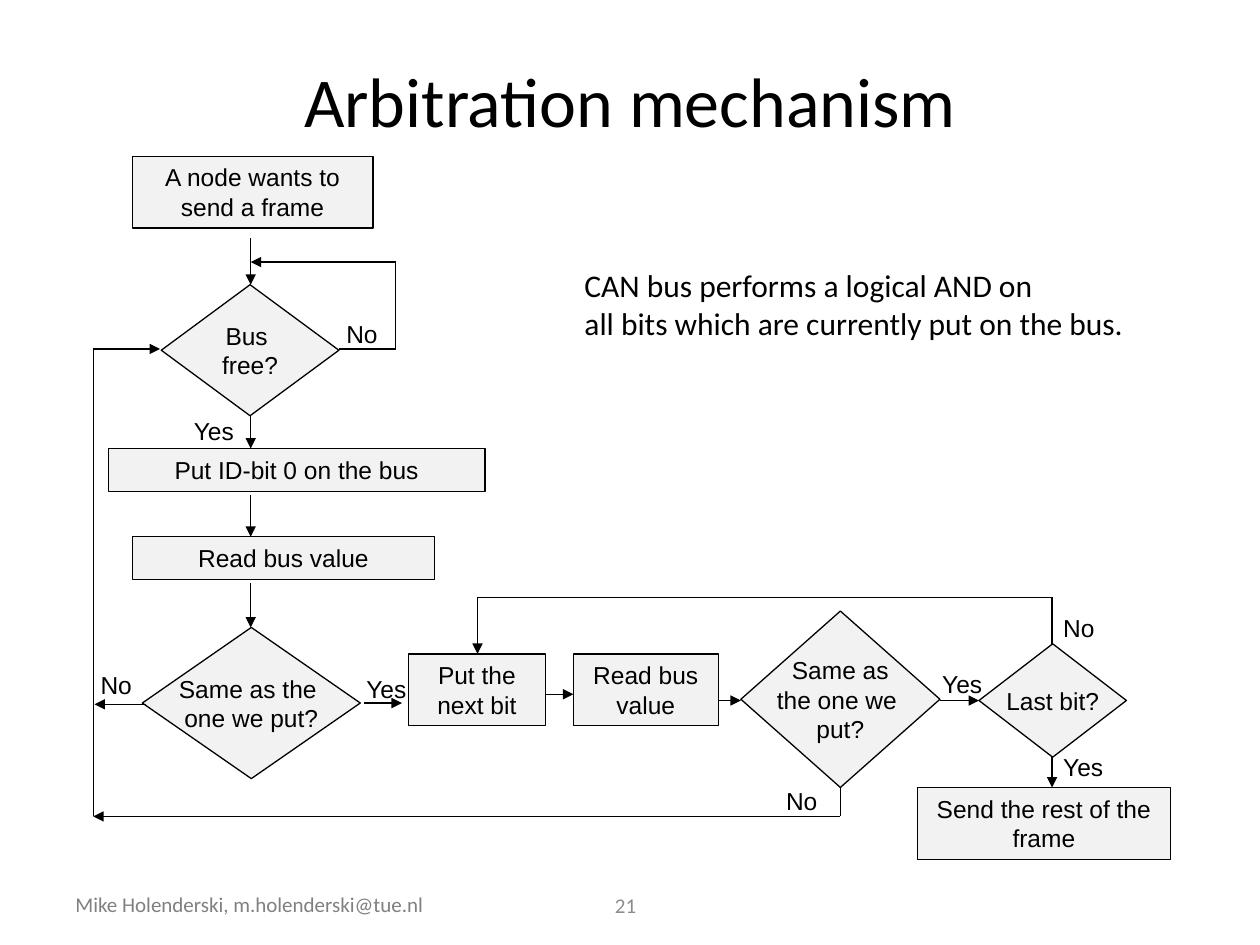
from dataclasses import dataclass
from itertools import pairwise

from lxml import etree
from pptx import Presentation
from pptx.dml.color import RGBColor
from pptx.enum.shapes import MSO_CONNECTOR, MSO_SHAPE
from pptx.enum.text import MSO_ANCHOR, PP_ALIGN
from pptx.oxml.ns import qn
from pptx.util import Inches, Pt

RECT, DECISION = MSO_SHAPE.RECTANGLE, MSO_SHAPE.FLOWCHART_DECISION
STRAIGHT = MSO_CONNECTOR.STRAIGHT
LEFT, CENTER = PP_ALIGN.LEFT, PP_ALIGN.CENTER
TOP, MIDDLE = MSO_ANCHOR.TOP, MSO_ANCHOR.MIDDLE


@dataclass(frozen=True)
class Theme:
    ink: RGBColor = RGBColor(0x00, 0x00, 0x00)
    node: RGBColor = RGBColor(0xF2, 0xF2, 0xF2)
    author: RGBColor = RGBColor(0x80, 0x80, 0x80)
    number: RGBColor = RGBColor(0x8C, 0x8C, 0x8C)
    chart_font: str = "Arial"
    text_font: str = "Calibri"
    title_size: int = 40
    note_size: int = 18
    chart_size: int = 14
    footer_size: int = 12
    line_width: float = 0.75


class FlowSlide:
    def __init__(self, slide, theme):
        self.s, self.theme = slide, theme
        self.chart_text = {"name": theme.chart_font, "size": Pt(theme.chart_size)}

    def fill_text(self, sp, text, font, color=None, align=LEFT, anchor=TOP, wrap=True):
        """Fill a shape with one paragraph per line of text."""
        tf = sp.text_frame
        tf.text = text
        for name, value in {"word_wrap": wrap, "vertical_anchor": anchor}.items():
            setattr(tf, name, value)
        for p in tf.paragraphs:
            p.alignment = align
            for r in p.runs:
                for name, value in font.items():
                    setattr(r.font, name, value)
                r.font.color.rgb = color or self.theme.ink

    def title(self, text, box):
        sp = self.s.shapes.title
        for name, value in zip(("left", "top", "width", "height"), box):
            setattr(sp, name, Inches(value))
        font = {"name": self.theme.text_font, "size": Pt(self.theme.title_size)}
        self.fill_text(sp, text, font, align=CENTER, anchor=MIDDLE)

    def text(self, text, box, size, **style):
        sp = self.s.shapes.add_textbox(*map(Inches, box))
        font = {"name": self.theme.text_font, "size": Pt(size)}
        self.fill_text(sp, text, font, **style)

    def label(self, text, left, top):
        sp = self.s.shapes.add_textbox(*map(Inches, (left, top, 0.63, 0.34)))
        self.fill_text(sp, text, self.chart_text)

    def node(self, kind, text, box, **style):
        sp = self.s.shapes.add_shape(kind, *map(Inches, box))
        sp.shadow.inherit = False
        sp.fill.solid()
        sp.fill.fore_color.rgb = self.theme.node
        sp.line.color.rgb = self.theme.ink
        sp.line.width = Pt(self.theme.line_width)
        self.fill_text(sp, text, self.chart_text, align=CENTER, **style)

    def step(self, text, box):
        self.node(RECT, text, box)

    def decision(self, text, box):
        self.node(DECISION, text, box, anchor=MIDDLE, wrap=False)

    def flow(self, *points, arrow=True):
        """Join the points with straight lines; the last may end in an arrowhead."""
        for start, end in pairwise(points):
            line = self.s.shapes.add_connector(STRAIGHT, *map(Inches, start + end))
            line.line.color.rgb = self.theme.ink
            line.line.width = Pt(self.theme.line_width)
            props = line._element.spPr
            if arrow and end == points[-1]:
                etree.SubElement(props.find(qn("a:ln")), qn("a:tailEnd"), type="triangle")
            etree.SubElement(props, qn("a:effectLst"))


STEPS = [
    ("A node wants to send a frame", (1.05, 1.24, 1.91, 0.57)),
    ("Put ID-bit 0 on the bus", (0.86, 3.56, 2.99, 0.34)),
    ("Read bus value", (1.05, 4.26, 2.4, 0.34)),
    ("Put the next bit", (3.24, 5.19, 1.09, 0.57)),
    ("Read bus value", (4.55, 5.19, 1.15, 0.57)),
    ("Send the rest of the frame", (7.28, 6.25, 2.01, 0.57)),
]
DECISIONS = [
    ("Bus \nfree?", (1.28, 2.26, 1.41, 1.04)),
    ("Same as the \none we put?", (1.13, 4.98, 1.73, 1.2)),
    ("Same as\nthe one we \nput?", (5.88, 4.85, 1.58, 1.4)),
    ("Last bit?", (7.77, 5.11, 1.17, 0.9)),
]
LABELS = [
    ("No", 2.65, 2.48), ("Yes", 1.44, 3.25),
    ("No", 0.7, 5.27), ("Yes", 2.81, 5.3),
    ("No", 6.14, 6.19), ("Yes", 7.38, 5.26),
    ("No", 8.34, 4.82), ("Yes", 8.34, 5.92),
]
MAIN_X, RETURN_X, WAIT_X, CHECK_X, LAST_X = 1.99, 0.74, 3.14, 6.67, 8.35
FREE_Y, RETURN_Y, NEXT_Y = 2.77, 6.48, 4.74
DOWN = [(1.89, 2.26), (3.3, 3.56), (3.93, 4.26), (4.63, 4.98)]
ACROSS = [(1.16, 0.75, 5.59), (2.89, 3.19, 5.58), (4.33, 4.55, 5.51),
          (5.7, 5.88, 5.56), (7.46, 7.77, 5.56)]
LOOPS = [
    [(2.69, FREE_Y), (WAIT_X, FREE_Y), (WAIT_X, 2.08), (MAIN_X, 2.08)],
    [(CHECK_X, 6.25), (CHECK_X, RETURN_Y), (RETURN_X, RETURN_Y)],
    [(RETURN_X, 5.51), (RETURN_X, FREE_Y), (1.27, FREE_Y)],
    [(LAST_X, 5.11), (LAST_X, NEXT_Y), (3.79, NEXT_Y), (3.79, 5.19)],
    [(LAST_X, 6), (LAST_X, 6.25)],
]


def main():
    prs = Presentation()
    prs.slide_width, prs.slide_height = Inches(10), Inches(7.5)
    theme = Theme()
    s = FlowSlide(prs.slides.add_slide(prs.slide_layouts[5]), theme)

    s.text("Mike Holenderski, m.holenderski@tue.nl", (0.5, 7.03, 3.92, 0.3),
           theme.footer_size, color=theme.author)
    s.title("Arbitration mechanism", (0.5, 0.3, 9, 0.98))
    for text, box in STEPS:
        s.step(text, box)
    for text, box in DECISIONS:
        s.decision(text, box)
    for top, bottom in DOWN:
        s.flow((MAIN_X, top), (MAIN_X, bottom))
    for start, end, y in ACROSS:
        s.flow((start, y), (end, y))
    for points in LOOPS:
        s.flow(*points)
    s.flow((RETURN_X, RETURN_Y), (RETURN_X, 5.51), arrow=False)
    for text, left, top in LABELS:
        s.label(text, left, top)
    s.text("21", (4.42, 7.03, 1.09, 0.3), theme.footer_size,
           color=theme.number, align=CENTER, anchor=MIDDLE)
    s.text("CAN bus performs a logical AND on\n"
           "all bits which are currently put on the bus.",
           (4.54, 2.06, 4.53, 0.71), theme.note_size, wrap=False)
    prs.save("out.pptx")


if __name__ == "__main__":
    main()
